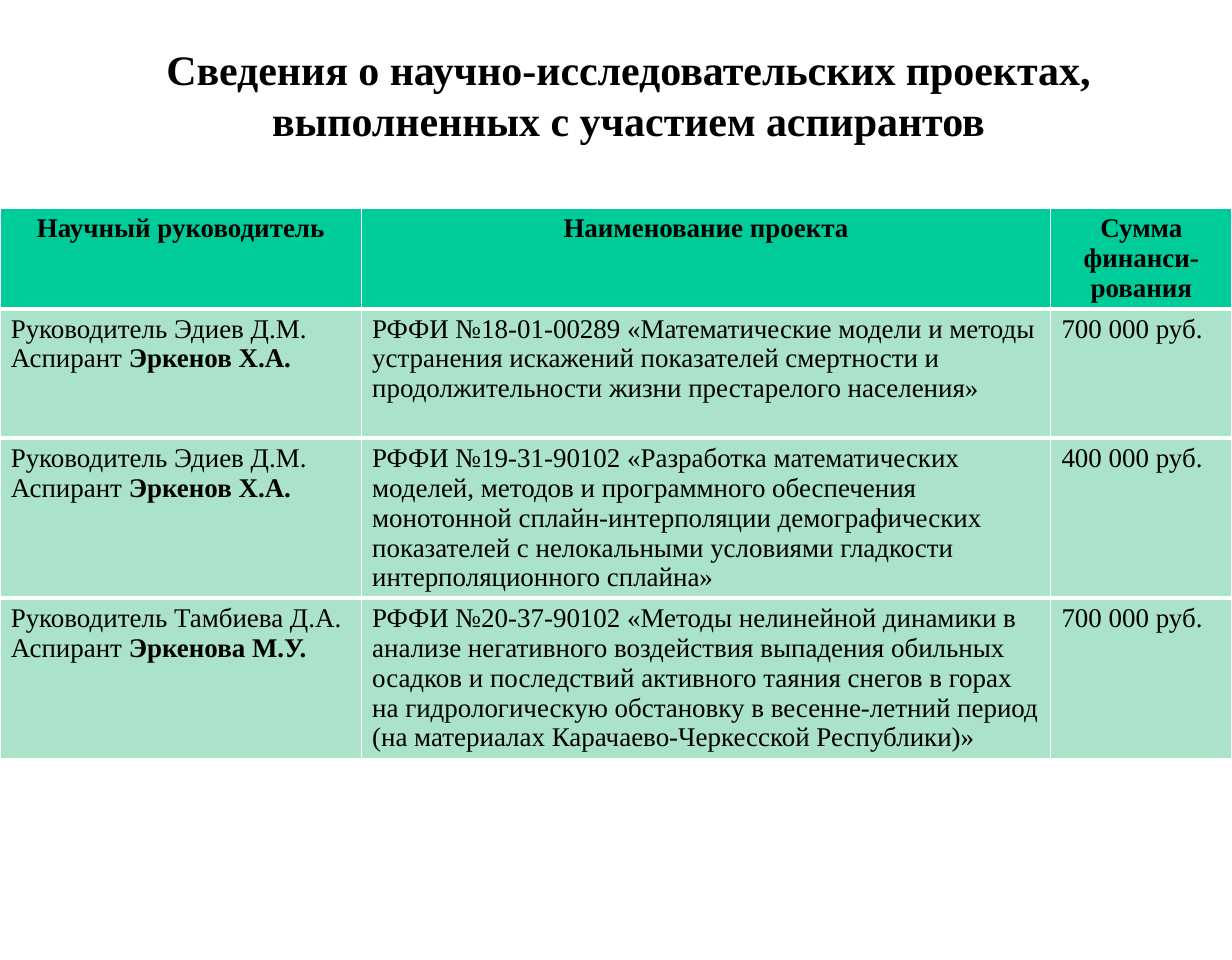
from lxml import etree
from pptx import Presentation
from pptx.dml.color import RGBColor
from pptx.enum.text import MSO_ANCHOR, PP_ALIGN
from pptx.oxml.ns import qn
from pptx.util import Inches, Pt

TITLE = "Сведения о научно-исследовательских проектах, выполненных с участием аспирантов"
HEADERS = ["Научный руководитель", "Наименование проекта", "Сумма финанси-рования"]
PROJECTS = [
    ("Эдиев Д.М.", "Эркенов Х.А.",
     "РФФИ №18-01-00289 «Математические модели и методы устранения искажений "
     "показателей смертности и продолжительности жизни престарелого населения»",
     "700 000 руб."),
    ("Эдиев Д.М.", "Эркенов Х.А.",
     "РФФИ №19-31-90102 «Разработка математических моделей, методов и программного "
     "обеспечения монотонной сплайн-интерполяции демографических показателей с "
     "нелокальными условиями гладкости интерполяционного сплайна»",
     "400 000 руб."),
    ("Тамбиева Д.А.", "Эркенова М.У.",
     "РФФИ №20-37-90102 «Методы нелинейной динамики в анализе негативного воздействия "
     "выпадения обильных осадков и последствий активного таяния снегов в горах на "
     "гидрологическую обстановку в весенне-летний период (на материалах "
     "Карачаево-Черкесской Республики)»",
     "700 000 руб."),
]

SLIDE_SIZE = (11.42, 8.9)
TITLE_BOX = (0.83, 0.12, 9.99, 1.5)
TABLE_TOP = 1.93
COLUMN_WIDTHS = [3.35, 6.39, 1.68]
ROW_HEIGHTS = [0.92, 1.2, 1.48, 1.48]
THIN, THICK = 1, 3
FONT = "Times New Roman"
BLACK = RGBColor(0x00, 0x00, 0x00)
WHITE = RGBColor(0xFF, 0xFF, 0xFF)
HEADER_GREEN = RGBColor(0x00, 0xCC, 0x99)
BODY_GREEN = RGBColor(0xAA, 0xE2, 0xCA)
CENTER, LEFT = PP_ALIGN.CENTER, PP_ALIGN.LEFT
MIDDLE = MSO_ANCHOR.MIDDLE


def write(paragraph, text, size=18, bold=False, alignment=LEFT):
    paragraph.text = text
    paragraph.alignment = alignment
    paragraph.font.name = FONT
    paragraph.font.size = Pt(size)
    paragraph.font.bold = bold
    paragraph.font.color.rgb = BLACK


def set_borders(cell, top, bottom):
    properties = cell._tc.get_or_add_tcPr()
    for side, width in (("L", THIN), ("R", THIN), ("T", top), ("B", bottom)):
        line = etree.SubElement(properties, qn(f"a:ln{side}"), w=str(Pt(width)))
        fill = etree.SubElement(line, qn("a:solidFill"))
        etree.SubElement(fill, qn("a:srgbClr"), val=str(WHITE))


def add_title(slide):
    frame = slide.shapes.add_textbox(*map(Inches, TITLE_BOX)).text_frame
    frame.word_wrap = True
    frame.vertical_anchor = MIDDLE
    frame.margin_left = frame.margin_top = frame.margin_right = frame.margin_bottom = 0
    write(frame.paragraphs[0], TITLE, size=28, bold=True, alignment=CENTER)
    frame.paragraphs[0].line_spacing = 1.01


def add_projects(slide):
    table = slide.shapes.add_table(
        len(ROW_HEIGHTS), len(COLUMN_WIDTHS), 0, Inches(TABLE_TOP),
        Inches(sum(COLUMN_WIDTHS)), Inches(sum(ROW_HEIGHTS))).table
    for column, width in zip(table.columns, COLUMN_WIDTHS):
        column.width = Inches(width)
    last = len(ROW_HEIGHTS) - 1
    for index, (row, height) in enumerate(zip(table.rows, ROW_HEIGHTS)):
        row.height = Inches(height)
        for cell in row.cells:
            set_borders(cell, THICK if index else THIN, THIN if index == last else THICK)
            cell.fill.solid()
            cell.fill.fore_color.rgb = BODY_GREEN if index else HEADER_GREEN
    for column, header in enumerate(HEADERS):
        write(table.cell(0, column).text_frame.paragraphs[0], header, bold=True, alignment=CENTER)
    for row, (supervisor, student, project, funding) in enumerate(PROJECTS, 1):
        people = table.cell(row, 0).text_frame
        write(people.paragraphs[0], f"Руководитель {supervisor}")
        student_line = people.add_paragraph()
        write(student_line, "Аспирант ")
        name = student_line.add_run()
        name.text = student
        name.font.bold = True
        write(table.cell(row, 1).text_frame.paragraphs[0], project)
        write(table.cell(row, 2).text_frame.paragraphs[0], funding)


def main():
    """Build the slide on research projects carried out with postgraduates."""
    presentation = Presentation()
    presentation.slide_width, presentation.slide_height = map(Inches, SLIDE_SIZE)
    slide = presentation.slides.add_slide(presentation.slide_layouts[6])
    add_projects(slide)
    add_title(slide)
    presentation.save("out.pptx")


if __name__ == "__main__":
    main()
